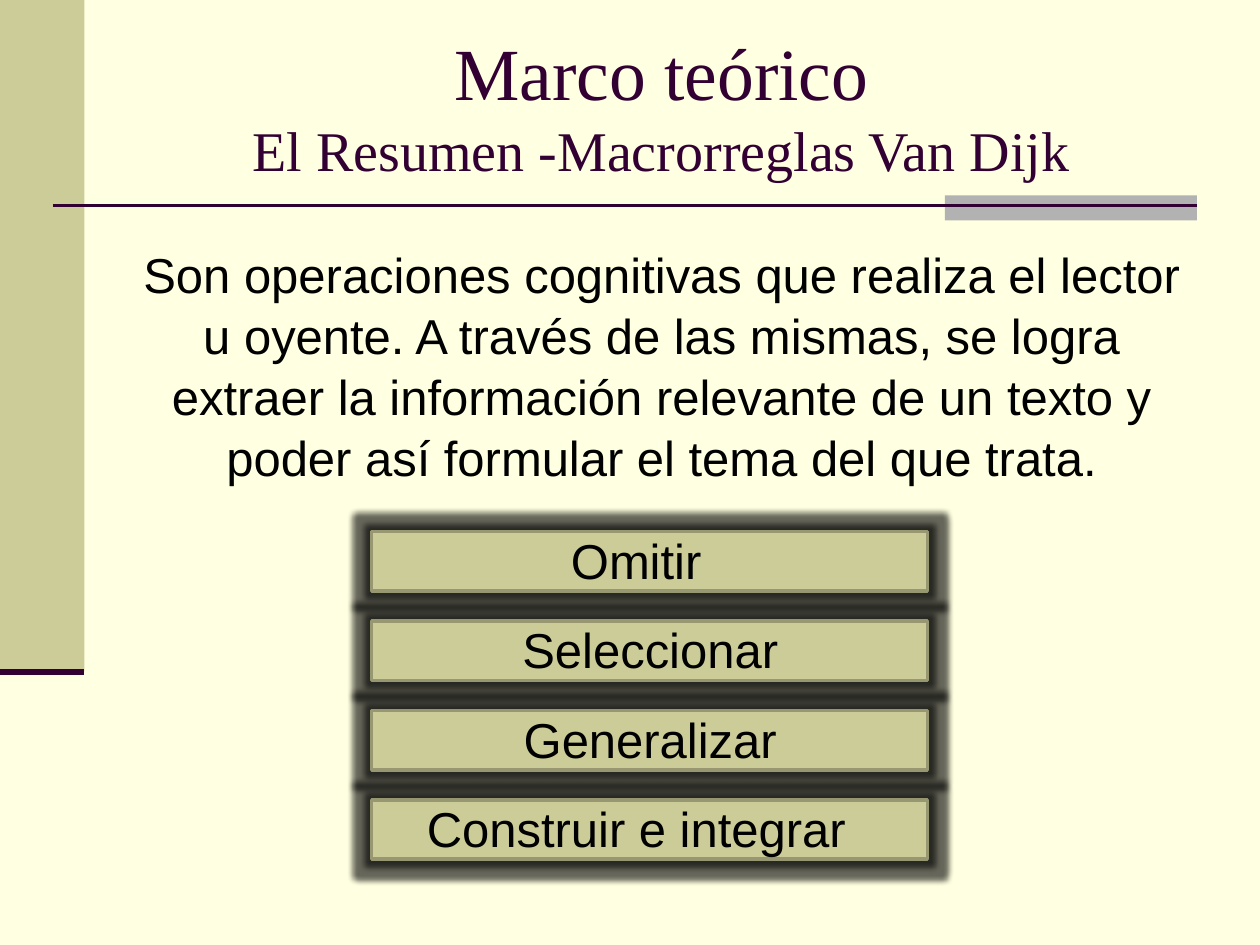
from lxml import etree
from pptx import Presentation
from pptx.dml.color import RGBColor
from pptx.enum.shapes import MSO_CONNECTOR, MSO_SHAPE
from pptx.enum.text import MSO_ANCHOR, MSO_AUTO_SIZE, PP_ALIGN
from pptx.oxml import parse_xml
from pptx.oxml.ns import nsdecls, qn
from pptx.util import Inches, Pt

PLUM, OLIVE, CREAM = "330033", "CCCC99", "FFFFE1"
GREY, EDGE, BLACK = "B2B2B2", "979771", "000000"
BODY_FONT = {"name": "Arial", "size": Pt(28)}
RULES = ["Omitir", "Seleccionar", "Generalizar", "Construir e integrar"]
SHIFTED_LEFT = {"Omitir", "Construir e integrar"}


def color(value):
    return RGBColor.from_string(value)


def set_values(target, values):
    for name, value in values.items():
        setattr(target, name, value)


def place(shape, left, top, width, height):
    set_values(shape, {"left": Inches(left), "top": Inches(top),
                       "width": Inches(width), "height": Inches(height)})


def write(para, text, font, ink):
    span = para.add_run()
    span.text = text
    set_values(span.font, font)
    span.font.color.rgb = color(ink)


def write_body(frame, text):
    set_values(frame, {"word_wrap": True, "auto_size": MSO_AUTO_SIZE.NONE})
    para = frame.paragraphs[0]
    set_values(para, {"alignment": PP_ALIGN.CENTER, "line_spacing": 1.04,
                      "space_before": Pt(0)})
    write(para, text, BODY_FONT, BLACK)
    return para


def add_block(page, left, top, width, height, fill):
    block = page.shapes.add_shape(MSO_SHAPE.RECTANGLE, Inches(left), Inches(top),
                                  Inches(width), Inches(height))
    block.shadow.inherit = False
    block.fill.solid()
    block.fill.fore_color.rgb = color(fill)
    block.line.fill.background()
    return block


def add_rule(page, left, top, width, weight):
    y = Inches(top)
    rule = page.shapes.add_connector(MSO_CONNECTOR.STRAIGHT, Inches(left), y,
                                     Inches(left + width), y)
    rule.line.color.rgb = color(PLUM)
    rule.line.width = Pt(weight)
    etree.SubElement(rule._element.spPr, qn("a:effectLst"))


def add_glow(shape, radius):
    effects = shape._element.spPr.find(qn("a:effectLst"))
    effects.append(parse_xml(
        f'<a:glow {nsdecls("a")} rad="{Inches(radius)}">'
        f'<a:srgbClr val="{BLACK}"><a:alpha val="60000"/></a:srgbClr></a:glow>'))


def add_decoration(page):
    add_block(page, 0, 0, 0.67, 5.33, OLIVE)
    add_block(page, 7.5, 1.55, 2, 0.2, GREY)
    add_rule(page, 0.42, 1.63, 9.08, 1.5)
    add_rule(page, 0, 5.33, 0.67, 3.5)


def fill_title(title, box):
    place(title, *box)
    frame = title.text_frame
    set_values(frame, {"vertical_anchor": MSO_ANCHOR.MIDDLE,
                       "auto_size": MSO_AUTO_SIZE.NONE})
    para = frame.paragraphs[0]
    para.alignment = PP_ALIGN.CENTER
    serif = {"name": "Times New Roman"}
    write(para, "Marco teórico", serif | {"size": Pt(42)}, PLUM)
    para.add_line_break()
    write(para, "El Resumen -Macrorreglas Van Dijk", serif | {"size": Pt(32)}, PLUM)


def fill_definition(body, box):
    place(body, *box)
    para = write_body(
        body.text_frame,
        "Son operaciones cognitivas que realiza el lector u oyente. "
        "A través de las mismas, se logra extraer la información relevante "
        "de un texto y poder así formular el tema del que trata.")
    properties = para._p.get_or_add_pPr()
    properties.set("marL", "0")
    properties.set("indent", "0")
    etree.SubElement(properties, qn("a:buNone"))


def add_rule_box(page, text, left, top, width, height):
    panel = add_block(page, left + 0.15, top + 0.08, width - 0.31, height - 0.16, OLIVE)
    panel.line.color.rgb = color(EDGE)
    panel.line.width = Pt(2)
    add_glow(panel, 0.1)
    label = page.shapes.add_textbox(Inches(left), Inches(top), Inches(width), Inches(height))
    write_body(label.text_frame, text)
    if text in SHIFTED_LEFT:
        label.text_frame.margin_right = Inches(0.32)


def add_rule_stack(page, left, top, width, height, pitch):
    # The lowest box lies at the back.
    for index, text in reversed(list(enumerate(RULES))):
        add_rule_box(page, text, left, top + index * pitch, width, height)


def main():
    deck = Presentation()
    set_values(deck, {"slide_width": Inches(10), "slide_height": Inches(7.5)})
    page = deck.slides.add_slide(deck.slide_layouts[1])
    page.background.fill.solid()
    page.background.fill.fore_color.rgb = color(CREAM)
    add_decoration(page)
    fill_title(page.shapes.title, (1, 0.21, 8.5, 1.25))
    fill_definition(page.placeholders[1], (1, 1.87, 8.5, 1.96))
    add_rule_stack(page, 2.8, 4.14, 4.72, 0.63, pitch=0.71)
    deck.save("out.pptx")


if __name__ == "__main__":
    main()
